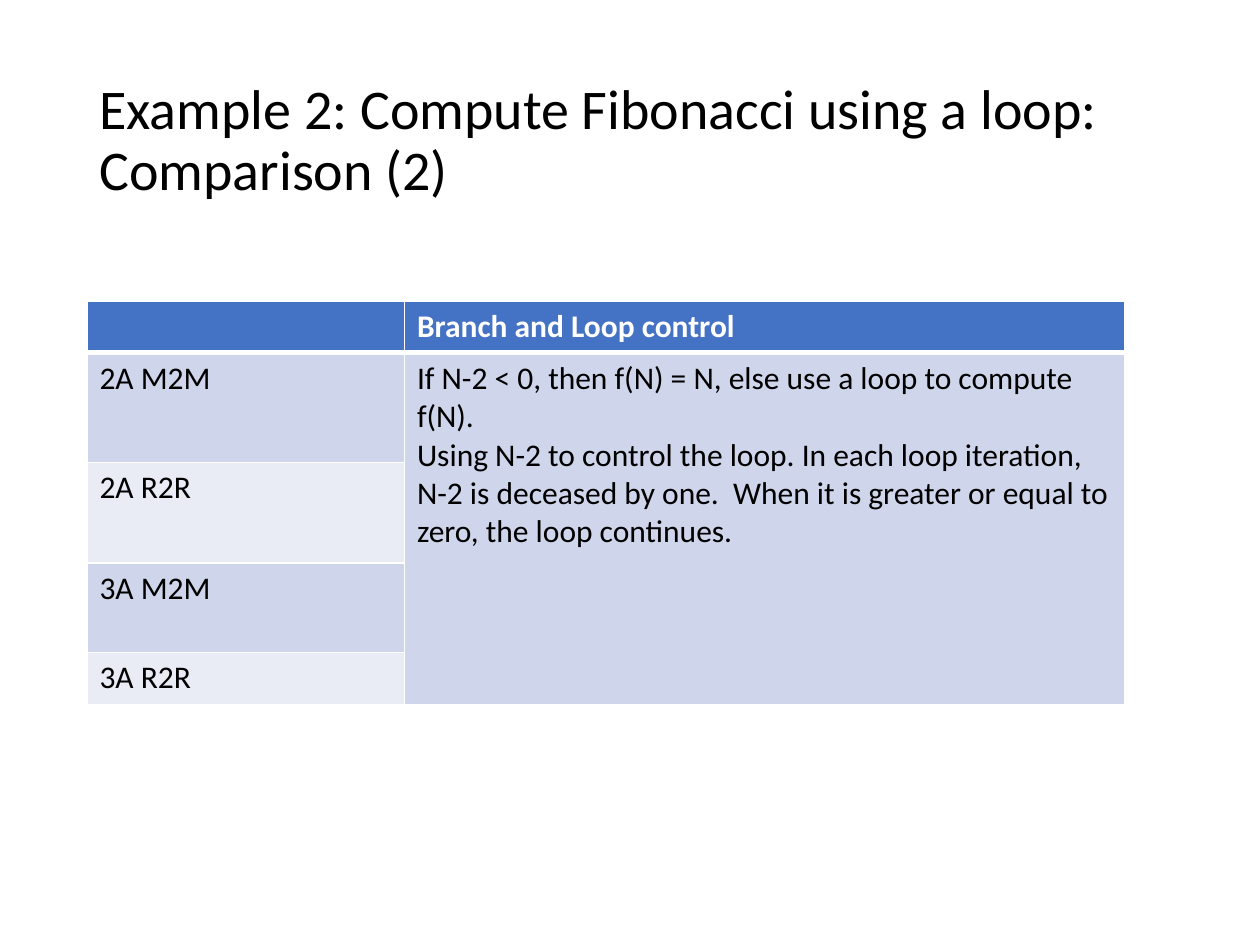
"""Build the slide comparing branch and loop control across instruction formats."""
import dataclasses

import lxml.etree
import pptx
import pptx.dml.color
import pptx.enum.text
import pptx.oxml.ns
import pptx.util

Inches = pptx.util.Inches
Pt = pptx.util.Pt


@dataclasses.dataclass(frozen=True)
class Theme:
    """Colours and type of the slide."""
    font: str = "Calibri"
    title_size: int = 32
    body_size: int = 18
    text: str = "000000"
    white: str = "FFFFFF"
    header: str = "4472C4"
    bands: tuple = ("CFD5EA", "E9EBF5")


THEME = Theme()
TITLE = "Example 2: Compute Fibonacci using a loop: Comparison (2)"
HEADING = "Branch and Loop control"
FORMATS = ["2A M2M", "2A R2R", "3A M2M", "3A R2R"]
EXPLANATION = [
    "If N-2 < 0, then f(N) = N, else use a loop to compute f(N).",
    "Using N-2 to control the loop. In each loop iteration, N-2 is deceased by one.  "
    "When it is greater or equal to zero, the loop continues.",
]
COLUMNS = [2.52, 5.72]
ROWS = [0.41, 0.87, 0.8, 0.71, 0.41]


def rgb(value):
    """Turn a hex string into a colour."""
    return pptx.dml.color.RGBColor.from_string(value)


def add_text(tf, paragraphs, size, color, bold=False):
    """Write each string as a one-run paragraph."""
    for i, text in enumerate(paragraphs):
        p = tf.add_paragraph() if i else tf.paragraphs[0]
        r = p.add_run()
        r.text = text
        r.font.name = THEME.font
        r.font.size = Pt(size)
        r.font.bold = bold
        r.font.color.rgb = rgb(color)


def add_title(s, text):
    """Add the slide title."""
    sp = s.shapes.add_textbox(Inches(0.69), Inches(0.4), Inches(8.62), Inches(1.45))
    tf = sp.text_frame
    tf.word_wrap = True
    tf.vertical_anchor = pptx.enum.text.MSO_ANCHOR.MIDDLE
    add_text(tf, [text], THEME.title_size, THEME.text)
    tf.paragraphs[0].line_spacing = 0.9


def set_borders(cell, top, bottom):
    """Draw white borders, given the top and bottom widths in points."""
    qn = pptx.oxml.ns.qn
    tc_pr = cell._tc.get_or_add_tcPr()
    for side, width in zip("LRTB", (1, 1, top, bottom)):
        ln = lxml.etree.SubElement(tc_pr, qn("a:ln" + side), w=str(Pt(width)))
        fill = lxml.etree.SubElement(ln, qn("a:solidFill"))
        lxml.etree.SubElement(fill, qn("a:srgbClr"), val=THEME.white)


def add_comparison(s):
    """Add the table with one explanation spanning all formats."""
    frame = s.shapes.add_table(len(ROWS), len(COLUMNS), Inches(0.69), Inches(2.39),
                               Inches(sum(COLUMNS)), Inches(sum(ROWS)))
    table = frame.table
    for column, width in zip(table.columns, COLUMNS):
        column.width = Inches(width)
    for i, height in enumerate(ROWS):
        table.rows[i].height = Inches(height)
        for j in range(len(COLUMNS)):
            cell = table.cell(i, j)
            set_borders(cell, 3 if i == 1 else 1, 3 if i == 0 else 1)
            cell.fill.solid()
            band = THEME.bands[0 if j else (i - 1) % 2]
            cell.fill.fore_color.rgb = rgb(band if i else THEME.header)
    table.cell(1, 1).merge(table.cell(len(FORMATS), 1))
    add_text(table.cell(0, 1).text_frame, [HEADING], THEME.body_size, THEME.white, True)
    for i, name in enumerate(FORMATS, 1):
        add_text(table.cell(i, 0).text_frame, [name], THEME.body_size, THEME.text)
    add_text(table.cell(1, 1).text_frame, EXPLANATION, THEME.body_size, THEME.text)


def main():
    """Build and save the presentation."""
    prs = pptx.Presentation()
    prs.slide_width, prs.slide_height = Inches(10), Inches(7.5)
    s = prs.slides.add_slide(prs.slide_layouts[6])
    add_title(s, TITLE)
    add_comparison(s)
    prs.save("out.pptx")


if __name__ == "__main__":
    main()
